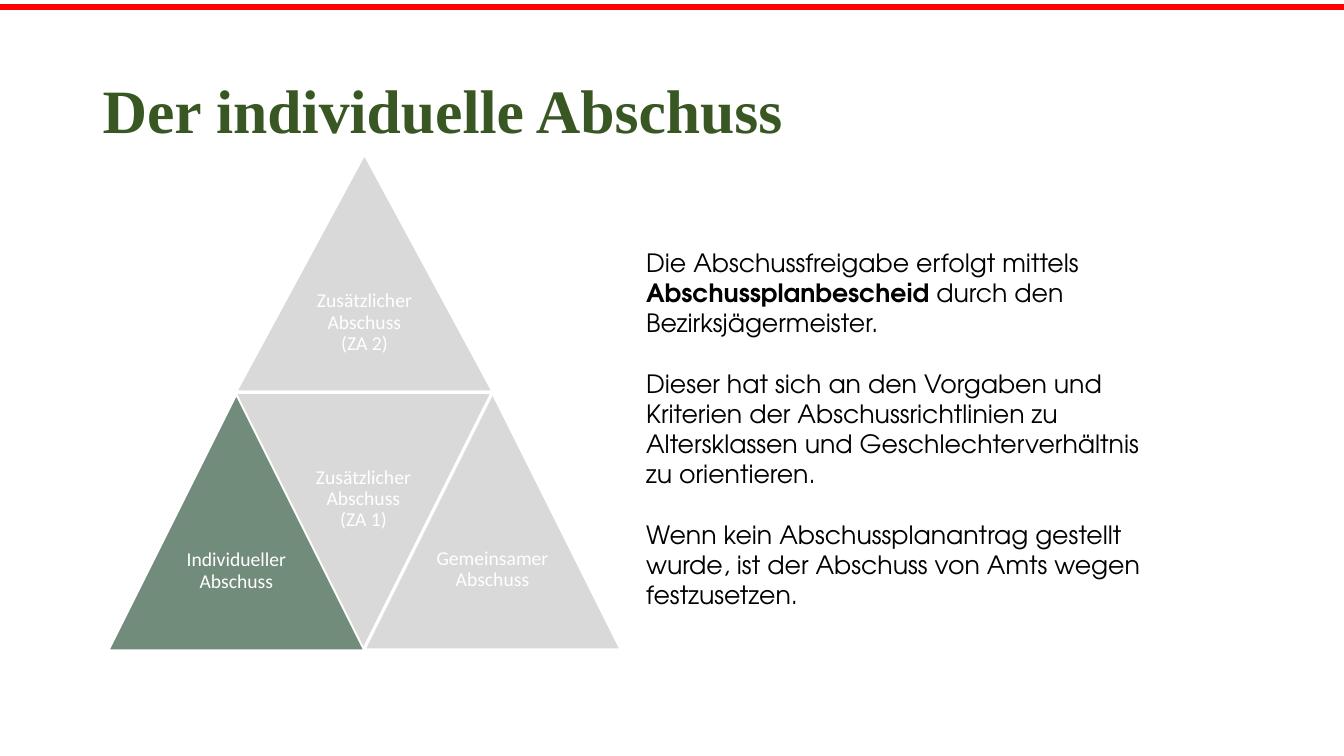
import pptx
import pptx.util
import pptx.dml.color
import pptx.enum.text
import pptx.enum.shapes
import pptx.oxml.ns
import lxml.etree

Inches, Pt = pptx.util.Inches, pptx.util.Pt
RGBColor = pptx.dml.color.RGBColor
MIDDLE = pptx.enum.text.MSO_ANCHOR.MIDDLE
CENTER = pptx.enum.text.PP_ALIGN.CENTER

RED = RGBColor(0xFF, 0x00, 0x00)
DARK_GREEN = RGBColor(0x38, 0x57, 0x23)
SAGE = RGBColor(0x72, 0x8C, 0x7B)
GREY = RGBColor(0xD9, 0xD9, 0xD9)
WHITE = RGBColor(0xFF, 0xFF, 0xFF)
BLACK = RGBColor(0x00, 0x00, 0x00)

WIDTH, HEIGHT = 13.33, 7.5
UP = [(0, 1), (0.5, 0), (1, 1)]
DOWN = [(1, 0), (0.5, 1), (0, 0)]
SIDE = 2.53

TRIANGLES = [
    ("Zusätzlicher Abschuss\v(ZA 2)", (2.35, 1.54, SIDE, 2.34), UP, GREY, 0.71),
    ("Individueller Abschuss", (1.08, 3.92, SIDE, SIDE), UP, SAGE, 0.69),
    ("Zusätzlicher Abschuss\v(ZA 1)", (2.34, 3.9, SIDE, SIDE), DOWN, GREY, 0.415),
    ("Gemeinsamer Abschuss", (3.62, 3.91, SIDE, SIDE), UP, GREY, 0.69),
]

BODY = [
    [("Die Abschussfreigabe erfolgt mittels ", False),
     ("Abschussplanbescheid", True),
     (" durch den Bezirksjägermeister.", False)],
    [("Dieser hat sich an den Vorgaben und Kriterien der Abschussrichtlinien "
      "zu Altersklassen und Geschlechterverhältnis zu orientieren.", False)],
    [("Wenn kein Abschussplanantrag gestellt wurde, ist der Abschuss von Amts "
      "wegen festzusetzen.", False)],
]


def style(p, name, size, color):
    p.font.name, p.font.size, p.font.color.rgb = name, Pt(size), color


def add_text_box(s, box):
    tf = s.shapes.add_textbox(*map(Inches, box)).text_frame
    tf.word_wrap = True
    return tf


def add_top_rule(s, y):
    rule = s.shapes.add_connector(
        pptx.enum.shapes.MSO_CONNECTOR.STRAIGHT, 0, Inches(y), Inches(WIDTH), Inches(y))
    rule.line.color.rgb = RED
    rule.line.width = Pt(4.5)
    lxml.etree.SubElement(rule._element.spPr, pptx.oxml.ns.qn("a:effectLst"))


def add_title(s, box):
    tf = add_text_box(s, box)
    tf.vertical_anchor = MIDDLE
    p = tf.paragraphs[0]
    p.text = "Der individuelle Abschuss"
    p.line_spacing = 0.9
    style(p, "Times New Roman", 44, DARK_GREEN)
    p.font.bold = True


def add_body(s, box):
    tf = add_text_box(s, box)
    for i, runs in enumerate(BODY):
        p = tf.add_paragraph() if i else tf.paragraphs[0]
        if i:
            p.space_before = Pt(21.6)
        style(p, "TeX Gyre Adventor", 18, BLACK)
        for text, bold in runs:
            r = p.add_run()
            r.text = text
            if bold:
                r.font.bold = True


def add_triangle(s, label, box, corners, fill, text_center):
    left, top, width, height = box
    points = [(Inches(left + x * width), Inches(top + y * height)) for x, y in corners]
    builder = s.shapes.build_freeform(*points[0])
    builder.add_line_segments(points[1:], close=True)
    sp = builder.convert_to_shape()
    sp.shadow.inherit = False
    sp.fill.solid()
    sp.fill.fore_color.rgb = fill
    sp.line.color.rgb = WHITE
    sp.line.width = Pt(1)
    tf = sp.text_frame
    tf.word_wrap = True
    tf.vertical_anchor = MIDDLE
    tf.margin_left = tf.margin_right = Inches(0.69)
    shift = (2 * text_center - 1) * height
    tf.margin_top = Inches(max(shift, 0))
    tf.margin_bottom = Inches(max(-shift, 0))
    p = tf.paragraphs[0]
    p.text = label
    p.alignment = CENTER
    p.line_spacing = 0.9
    style(p, "Calibri", 14, WHITE)


def main():
    prs = pptx.Presentation()
    prs.slide_width, prs.slide_height = Inches(WIDTH), Inches(HEIGHT)
    s = prs.slides.add_slide(prs.slide_layouts[6])
    add_top_rule(s, 0.07)
    add_title(s, (0.92, 0.4, 11.5, 1.45))
    add_body(s, (6.31, 2.4, 5.22, 4.04))
    for triangle in TRIANGLES:
        add_triangle(s, *triangle)
    prs.save("out.pptx")


if __name__ == "__main__":
    main()
